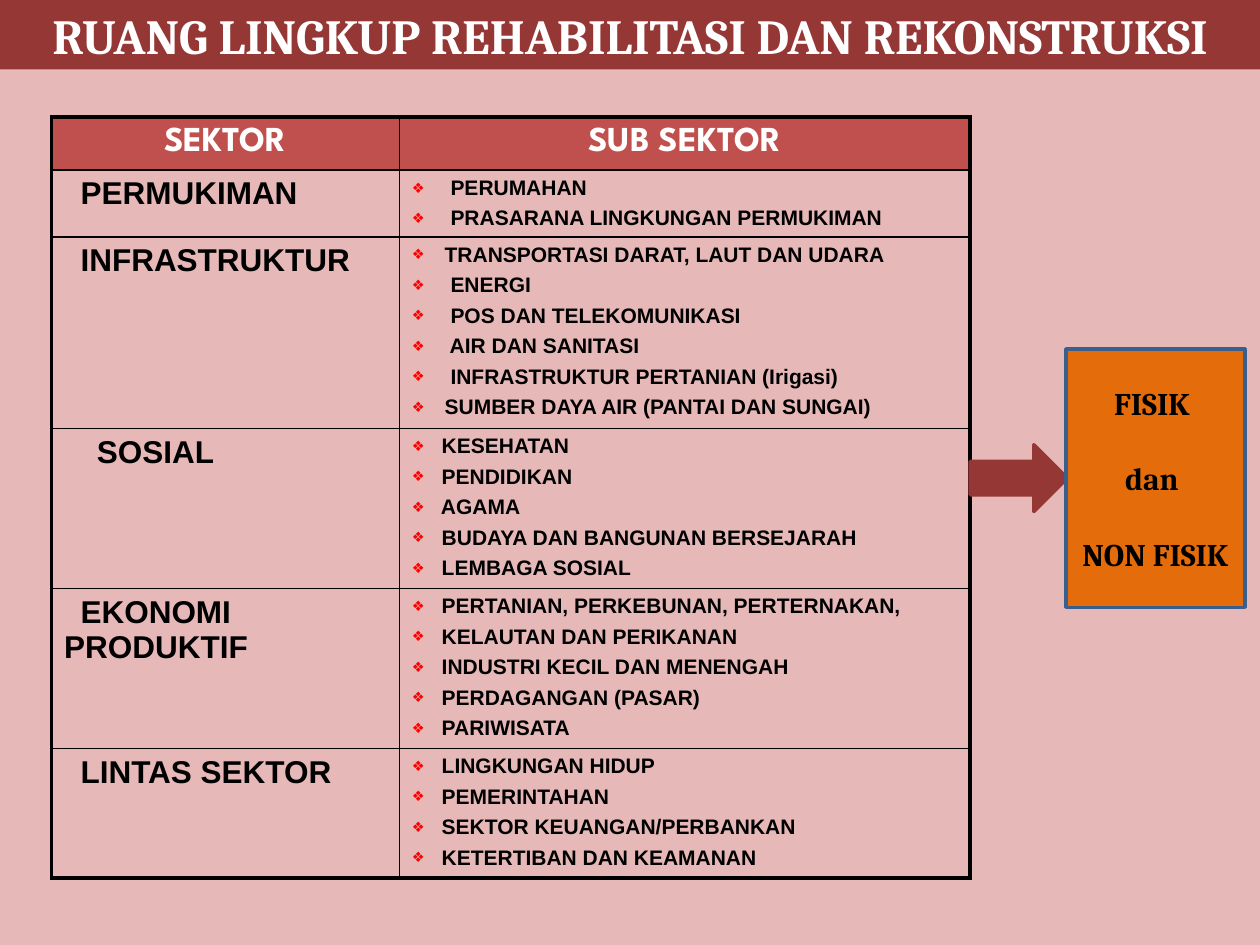
from lxml import etree
from pptx import Presentation
from pptx.dml.color import RGBColor
from pptx.enum.shapes import MSO_SHAPE
from pptx.enum.text import MSO_ANCHOR, PP_ALIGN
from pptx.oxml.ns import qn
from pptx.util import Inches, Pt

RECT, ARROW = MSO_SHAPE.RECTANGLE, MSO_SHAPE.RIGHT_ARROW
LEFT, MID = PP_ALIGN.LEFT, PP_ALIGN.CENTER
TOP, CENTRE = MSO_ANCHOR.TOP, MSO_ANCHOR.MIDDLE

COLORS = {
    "back": "E6B9B8", "dark": "953735", "head": "C0504D", "box": "E46C0A",
    "edge": "3A5F8C", "mark": "FF0000", "ink": "000000", "white": "FFFFFF",
}

HEADS = ["SEKTOR", "SUB SEKTOR"]
COLS = [2.76, 4.53]
HEAD_TALL = 0.42
# Sector, first-line indent, bullet hang, row height, sub-sectors
SECTORS = [
    ("PERMUKIMAN", 0.13, 0.26, 0.53,
     [" PERUMAHAN", " PRASARANA LINGKUNGAN PERMUKIMAN"]),
    ("INFRASTRUKTUR", 0.13, 0.26, 1.52,
     ["TRANSPORTASI DARAT, LAUT DAN UDARA", " ENERGI",
      " POS DAN TELEKOMUNIKASI", " AIR DAN SANITASI",
      " INFRASTRUKTUR PERTANIAN (Irigasi)",
      "SUMBER DAYA AIR (PANTAI DAN SUNGAI)"]),
    ("SOSIAL", 0.26, 0.19, 1.27,
     [" KESEHATAN", " PENDIDIKAN", " AGAMA",
      " BUDAYA DAN BANGUNAN BERSEJARAH", " LEMBAGA SOSIAL"]),
    ("EKONOMI PRODUKTIF", 0.13, 0.19, 1.27,
     [" PERTANIAN, PERKEBUNAN, PERTERNAKAN,", " KELAUTAN DAN PERIKANAN",
      " INDUSTRI KECIL DAN MENENGAH", " PERDAGANGAN (PASAR)",
      " PARIWISATA"]),
    ("LINTAS SEKTOR", 0.13, 0.19, 1.03,
     [" LINGKUNGAN HIDUP", " PEMERINTAHAN", " SEKTOR KEUANGAN/PERBANKAN",
      " KETERTIBAN DAN KEAMANAN"]),
]


def rgb(name):
    return RGBColor.from_string(COLORS[name])


def paint(fill, name):
    fill.solid()
    fill.fore_color.rgb = rgb(name)


def add_mark(props):
    """Give a paragraph a small red diamond bullet."""
    color = etree.SubElement(props, qn("a:buClr"))
    etree.SubElement(color, qn("a:srgbClr"), val=COLORS["mark"])
    etree.SubElement(props, qn("a:buSzPct"), val="68000")
    etree.SubElement(props, qn("a:buFont"), typeface="Arial")
    etree.SubElement(props, qn("a:buChar"), char="❖")


def write(frame, lines, size=18, font="Arial", color="ink", align=LEFT,
          gap=0, left=0, first=0, mark=False):
    """Fill a text frame with one bold paragraph per line."""
    for i, line in enumerate(lines):
        para = frame.paragraphs[0] if i == 0 else frame.add_paragraph()
        para.alignment = align
        para.space_before = Pt(gap if i else 0)
        props = para._p.get_or_add_pPr()
        props.set("marL", str(Inches(left)))
        props.set("indent", str(Inches(first)))
        if mark:
            add_mark(props)
        run = para.add_run()
        run.text = line
        run.font.size = Pt(size)
        run.font.name = font
        run.font.bold = True
        run.font.color.rgb = rgb(color)


def add_block(slide, kind, x, y, w, h, fill, line=None):
    shape = slide.shapes.add_shape(
        kind, Inches(x), Inches(y), Inches(w), Inches(h))
    shape.shadow.inherit = False
    paint(shape.fill, fill)
    if line:
        shape.line.color.rgb = rgb(line)
        shape.line.width = Pt(2)
    else:
        shape.line.fill.background()
    shape.text_frame.word_wrap = True
    shape.text_frame.vertical_anchor = CENTRE
    return shape


def add_edges(cell, row, col, last):
    """Draw cell borders, heavy along the outside of the table."""
    props = cell._tc.get_or_add_tcPr()
    outer = [("L", col == 0), ("R", col == 1),
             ("T", row == 0), ("B", row == last)]
    for i, (side, heavy) in enumerate(outer):
        edge = etree.Element(
            qn("a:ln" + side), w=str(Pt(2.25 if heavy else 1)))
        solid = etree.SubElement(edge, qn("a:solidFill"))
        etree.SubElement(solid, qn("a:srgbClr"), val=COLORS["ink"])
        props.insert(i, edge)


def add_grid(slide):
    talls = [HEAD_TALL] + [sector[3] for sector in SECTORS]
    grid = slide.shapes.add_table(
        len(talls), len(COLS), Inches(0.41), Inches(0.93),
        Inches(sum(COLS)), Inches(sum(talls))).table
    grid.horz_banding = False
    for col, wide in zip(grid.columns, COLS):
        col.width = Inches(wide)
    for row, tall in zip(grid.rows, talls):
        row.height = Inches(tall)

    # Fills and borders
    for r in range(len(talls)):
        for c in range(len(COLS)):
            cell = grid.cell(r, c)
            cell.vertical_anchor = TOP if r else CENTRE
            if r:
                cell.fill.background()
            else:
                paint(cell.fill, "head")
            add_edges(cell, r, c, len(talls) - 1)

    # Words
    for c, head in enumerate(HEADS):
        write(grid.cell(0, c).text_frame, [head], size=20,
              font="League Spartan", color="white", align=MID)
    for r, (name, first, hang, _, subs) in enumerate(SECTORS, 1):
        write(grid.cell(r, 0).text_frame, [name], first=first)
        write(grid.cell(r, 1).text_frame, subs, size=12, gap=4,
              left=hang, first=-hang, mark=True)


def main():
    deck = Presentation()
    deck.slide_width, deck.slide_height = Inches(10), Inches(7.5)
    slide = deck.slides.add_slide(deck.slide_layouts[6])
    paint(slide.background.fill, "back")

    # Sector table
    add_grid(slide)

    # Title band
    band = add_block(slide, RECT, 0, 0, 10, 0.55, "dark")
    write(band.text_frame, ["RUANG LINGKUP REHABILITASI DAN REKONSTRUKSI"],
          size=28, font="Cambria", color="white", align=MID)

    # Arrow to the result box
    add_block(slide, ARROW, 7.7, 3.53, 0.77, 0.53, "dark", "dark")
    box = add_block(slide, RECT, 8.46, 2.77, 1.42, 2.05, "box", "edge")
    write(box.text_frame, ["FISIK ", "dan ", "NON FISIK"],
          font="Cambria", align=MID, gap=21.5)

    deck.save("out.pptx")


if __name__ == "__main__":
    main()
